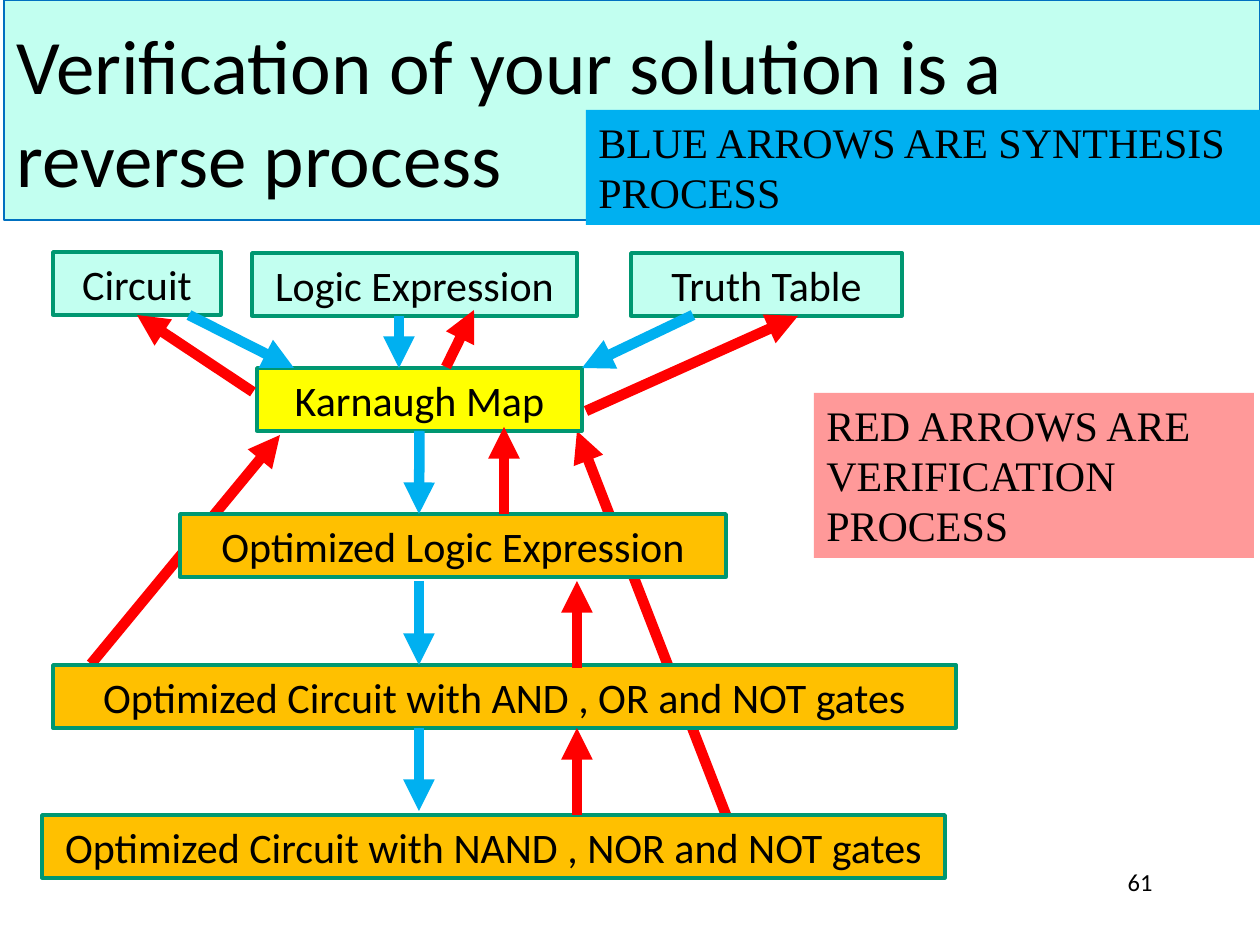
from lxml.etree import SubElement
from pptx import Presentation
from pptx.dml.color import RGBColor
from pptx.enum.shapes import MSO_CONNECTOR, MSO_SHAPE
from pptx.enum.text import MSO_ANCHOR, PP_ALIGN
from pptx.oxml.ns import qn
from pptx.util import Emu, Pt

SCALE = 914400 / 126
BLUE, RED = "00B0F0", "FF0000"
MINT, GREEN, ORANGE = "C2FFF0", "009771", "FFC000"


def add_box(text, left, top, width, height, fill=None, line=None, weight=2,
            size=24, font="Calibri", align=PP_ALIGN.CENTER, anchor=MSO_ANCHOR.MIDDLE):
    box = page.shapes.add_shape(
        MSO_SHAPE.RECTANGLE, *[Emu(round(px * SCALE)) for px in (left, top, width, height)])
    box.shadow.inherit = False
    if fill:
        box.fill.solid()
        box.fill.fore_color.rgb = RGBColor.from_string(fill)
    else:
        box.fill.background()
    if line:
        box.line.color.rgb = RGBColor.from_string(line)
        box.line.width = Pt(weight)
    else:
        box.line.fill.background()
    box.text_frame.word_wrap = True
    box.text_frame.vertical_anchor = anchor
    para = box.text_frame.paragraphs[0]
    para.alignment = align
    span = para.add_run()
    span.text = text
    span.font.size = Pt(size)
    span.font.name = font
    span.font.color.rgb = RGBColor.from_string("000000")
    return box


def add_arrow(color, *ends):
    arrow = page.shapes.add_connector(
        MSO_CONNECTOR.STRAIGHT, *[Emu(round(px * SCALE)) for px in ends])
    arrow.line.color.rgb = RGBColor.from_string(color)
    arrow.line.width = Pt(6)
    SubElement(arrow.line._get_or_add_ln(), qn("a:tailEnd"), type="triangle")
    SubElement(arrow._element.spPr, qn("a:effectLst"))
    return arrow


deck = Presentation()
deck.slide_width = Emu(round(1260 * SCALE))
deck.slide_height = Emu(round(945 * SCALE))
page = deck.slides.add_slide(deck.slide_layouts[6])

add_arrow(RED, 726, 815, 577, 431)
add_arrow(RED, 91, 664, 280, 435)

add_box("Verification of your solution is a reverse process", 4, 0, 1256, 220,
        fill=MINT, line="0070C0", weight=0.75, size=44, align=PP_ALIGN.LEFT)
add_box("61", 903, 861, 262, 63, size=14, align=PP_ALIGN.RIGHT, anchor=MSO_ANCHOR.TOP)

steps = {}
for text, left, top, width, fill in [
    ("Circuit", 53, 252, 168, MINT),
    ("Logic Expression", 252, 253, 325, MINT),
    ("Truth Table", 631, 253, 271, MINT),
    ("Karnaugh Map", 257, 368, 325, "FFFF00"),
    ("Optimized Logic Expression", 180, 514, 546, ORANGE),
    ("Optimized Circuit with AND , OR and NOT gates", 53, 665, 903, ORANGE),
    ("Optimized Circuit with NAND , NOR and NOT gates", 42, 815, 903, ORANGE),
]:
    steps[text] = add_box(text, left, top, width, 63, fill=fill, line=GREEN)

for text, left, top, width, height, fill in [
    ("BLUE ARROWS ARE SYNTHESIS PROCESS", 586, 110, 674, 115, BLUE),
    ("RED ARROWS ARE VERIFICATION PROCESS", 814, 393, 440, 165, "FF9999"),
]:
    add_box(text, left, top, width, height, fill=fill, font="Times New Roman",
            align=PP_ALIGN.LEFT, anchor=MSO_ANCHOR.TOP)

for color, *ends in [
    (BLUE, 399, 316, 399, 368),
    (BLUE, 189, 315, 294, 368),
    (BLUE, 693, 315, 582, 368),
    (BLUE, 419, 581, 419, 665),
    (BLUE, 419, 728, 419, 811),
    (RED, 577, 815, 577, 728),
    (RED, 577, 668, 577, 581),
    (RED, 504, 514, 504, 427),
    (RED, 586, 411, 798, 316),
    (RED, 446, 367, 474, 310),
]:
    add_arrow(color, *ends)

synthesis = add_arrow(BLUE, 419, 431, 419, 514)
synthesis.begin_connect(steps["Karnaugh Map"], 2)
verification = add_arrow(RED, 253, 392, 137, 315)
verification.end_connect(steps["Circuit"], 2)

deck.save("out.pptx")
